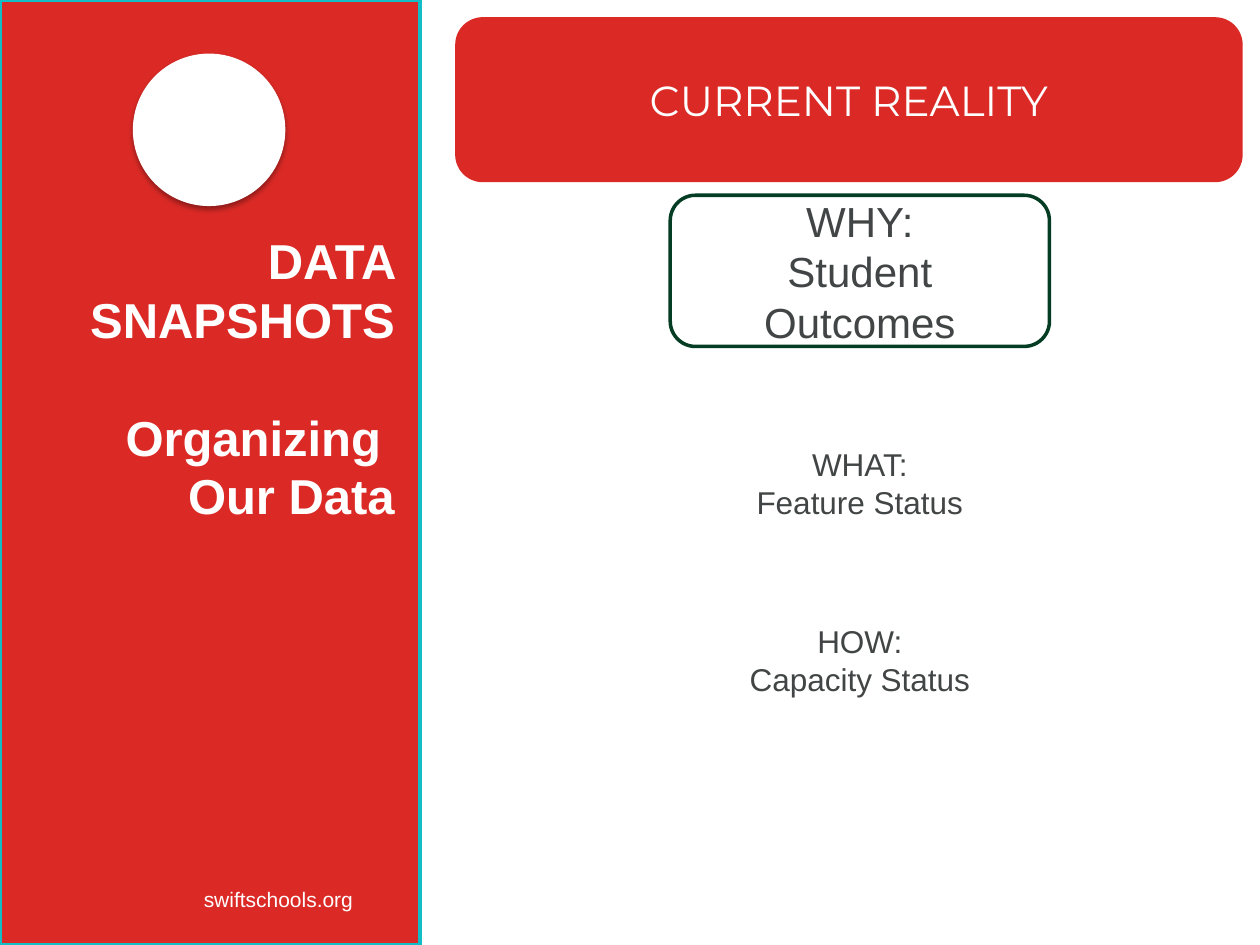
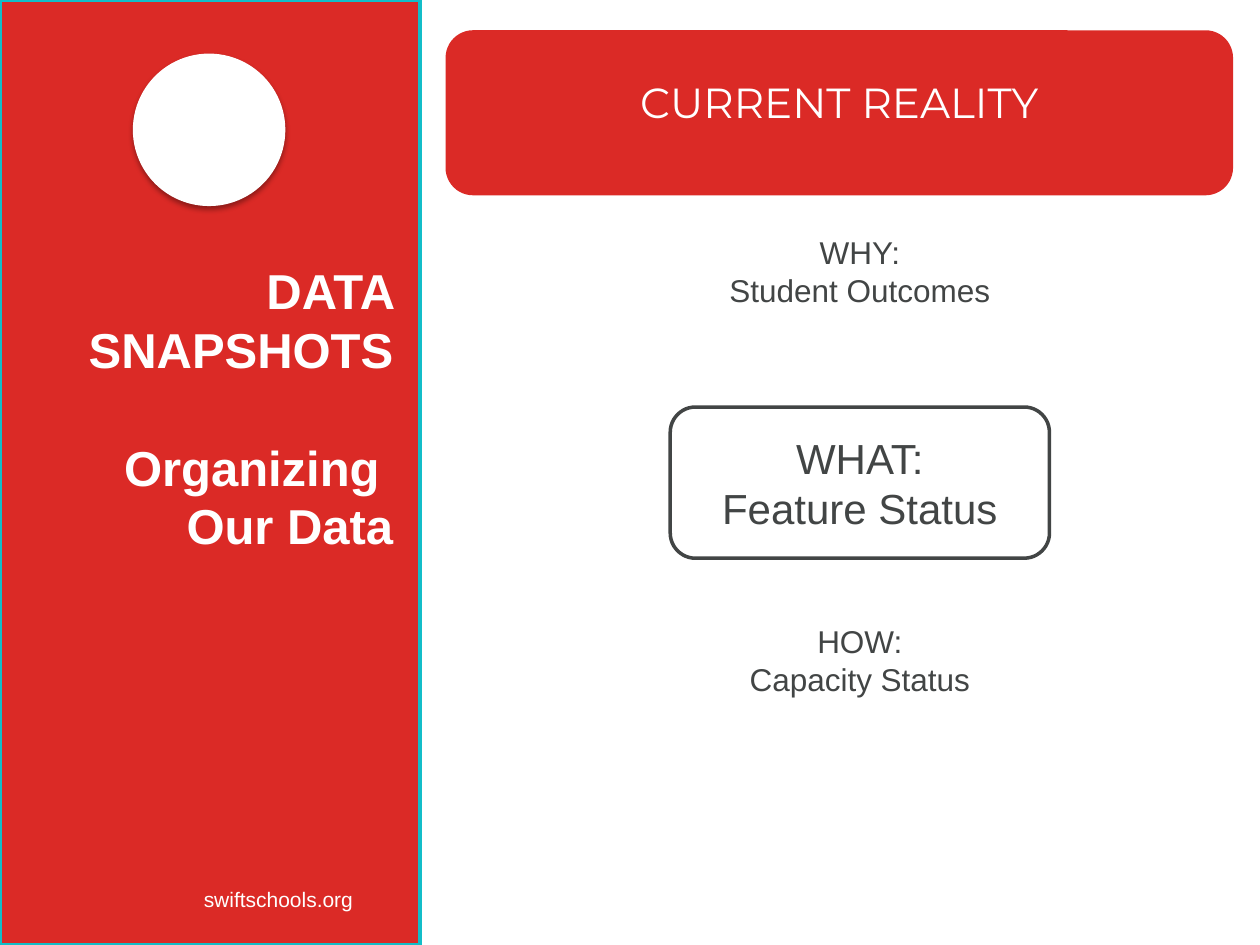
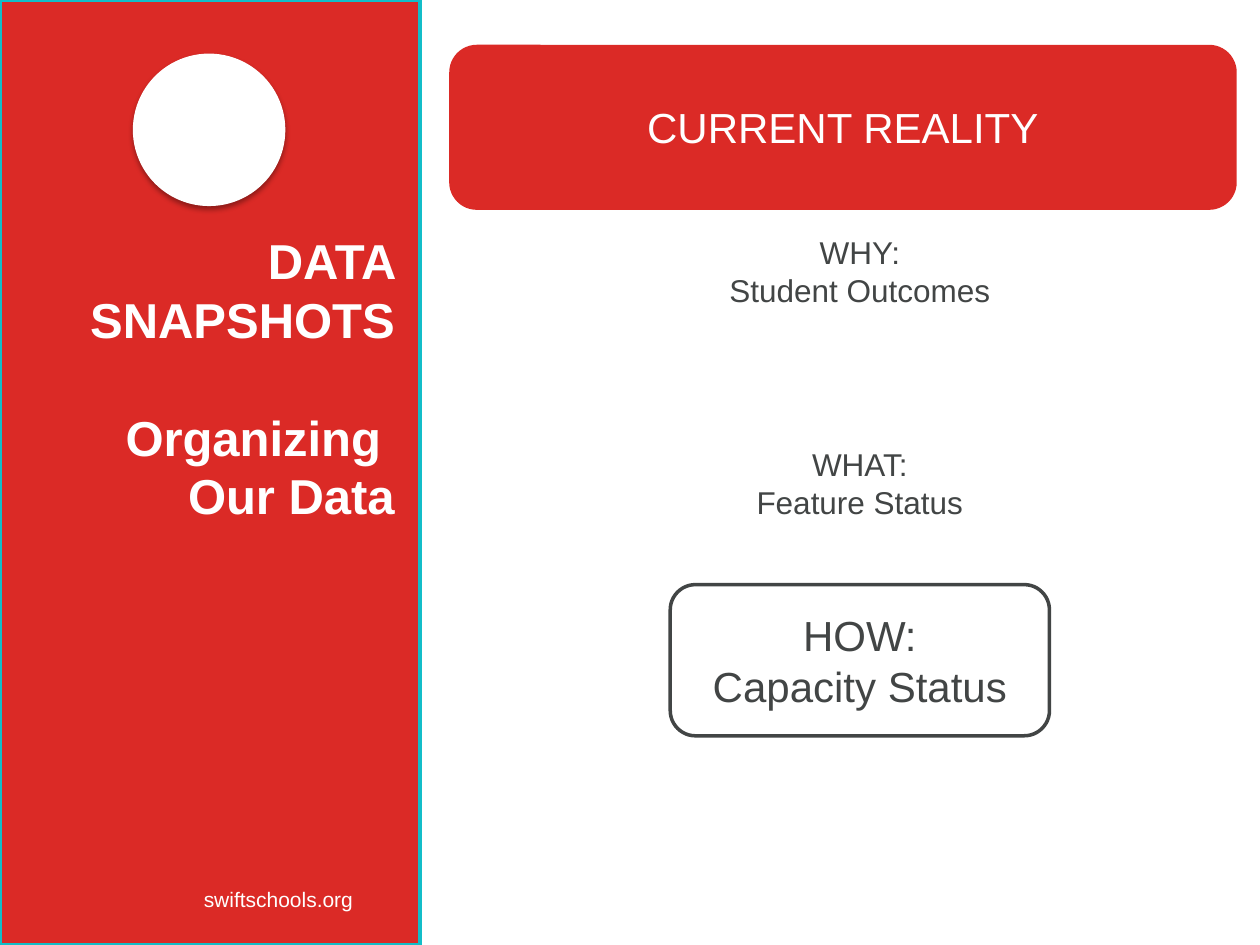
import pptx
import pptx.dml.color
import pptx.enum.shapes
import pptx.enum.text
import pptx.oxml
import pptx.oxml.ns
import pptx.util

Pt = pptx.util.Pt
RGBColor = pptx.dml.color.RGBColor
SHAPE = pptx.enum.shapes.MSO_SHAPE
ALIGN = pptx.enum.text.PP_ALIGN
ANCHOR = pptx.enum.text.MSO_ANCHOR

RED = RGBColor(0xDB, 0x2A, 0x26)
TEAL = RGBColor(0x13, 0xBD, 0xC8)
GREEN = RGBColor(0x04, 0x3D, 0x24)
GRAY = RGBColor(0x42, 0x45, 0x45)
WHITE = RGBColor(0xFF, 0xFF, 0xFF)

FOOTER = {"name": "Arial", "size": Pt(12)}
SIDE_TITLE = {"name": "Arial", "size": Pt(28), "bold": True}
HEADING = {"name": "Arial", "size": Pt(24)}
BODY = {"name": "Arial", "size": Pt(18)}

SHADOW = (
    '<a:effectLst %s><a:outerShdw blurRad="%d" dist="%d" dir="5400000" rotWithShape="0">'
    '<a:srgbClr val="000000"><a:alpha val="35000"/></a:srgbClr></a:outerShdw></a:effectLst>'
    % (pptx.oxml.ns.nsdecls("a"), Pt(3.1), Pt(1.8))
)

# Top and lines of each question box
QUESTIONS = [
    (111.6, ["WHY:", "Student Outcomes"]),
    (232.6, ["WHAT:", "Feature Status"]),
    (334.1, ["HOW:", "Capacity Status"]),
]

# Banner left and top, heading top and font, side title left and top,
# highlighted question and its outline colour
SLIDES = [
    (260.1, 9.8, 38.9, "Montserrat", 16.6, 128.2, 0, GREEN),
    (254.6, 17.3, 40.3, "Montserrat", 15.8, 145.4, 1, GRAY),
    (256.7, 25.6, 54.7, "Arial", 16.6, 128.2, 2, GRAY),
]


class Deck:
    def __init__(self):
        self.prs = pptx.Presentation()
        self.prs.slide_width, self.prs.slide_height = Pt(720), Pt(540)
        self.s = None

    def new_slide(self):
        self.s = self.prs.slides.add_slide(self.prs.slide_layouts[6])

    def shape(self, kind, x, y, w, h, fill=None, line=None, width=2):
        sp = self.s.shapes.add_shape(kind, Pt(x), Pt(y), Pt(w), Pt(h))
        sp.shadow.inherit = False
        if fill is None:
            sp.fill.background()
        else:
            sp.fill.solid()
            sp.fill.fore_color.rgb = fill
        if line is None:
            sp.line.fill.background()
        else:
            sp.line.color.rgb = line
            sp.line.width = Pt(width)
        return sp

    def set_text(self, sp, lines, fmt, color, align, anchor=ANCHOR.TOP):
        tf = sp.text_frame
        tf.word_wrap = True
        tf.vertical_anchor = anchor
        for i, text in enumerate(lines):
            p = tf.add_paragraph() if i else tf.paragraphs[0]
            p.alignment = align
            r = p.add_run()
            r.text = text
            for key, value in fmt.items():
                setattr(r.font, key, value)
            r.font.color.rgb = color
        return tf

    def text(self, x, y, w, h, lines, fmt, align=ALIGN.LEFT):
        sp = self.s.shapes.add_textbox(Pt(x), Pt(y), Pt(w), Pt(h))
        return self.set_text(sp, lines, fmt, WHITE, align)

    def side_band(self):
        self.shape(SHAPE.RECTANGLE, 0, 0, 240, 540, RED, TEAL)
        self.text(109.4, 503.3, 125.3, 21.6, ["swiftschools.org"], FOOTER)
        sp = self.shape(SHAPE.OVAL, 76.3, 31, 86.4, 86.4, WHITE, WHITE, 0.75)
        pr = sp._element.spPr
        pr.remove(pr.find(pptx.oxml.ns.qn("a:effectLst")))
        pr.append(pptx.oxml.parse_xml(SHADOW))

    def side_title(self, x, y):
        lines = ["DATA SNAPSHOTS", "Organizing ", "Our Data"]
        tf = self.text(x, y, 216, 200.9, lines, SIDE_TITLE, ALIGN.RIGHT)
        tf.paragraphs[1].space_before = Pt(33.6)

    def banner(self, x, y, heading_y, font):
        self.shape(SHAPE.ROUNDED_RECTANGLE, x, y, 450, 94.3, RED)
        self.text(x + 80.5, heading_y, 288.7, 36, ["CURRENT REALITY"],
                  {**HEADING, "name": font}, ALIGN.CENTER)

    def question(self, y, lines, outline=None):
        sp = self.shape(SHAPE.ROUNDED_RECTANGLE, 383, y, 216.7, 86.4, line=outline)
        self.set_text(sp, lines, HEADING if outline else BODY, GRAY,
                      ALIGN.CENTER, ANCHOR.MIDDLE)


def main():
    deck = Deck()
    for x, y, heading_y, font, title_x, title_y, current, outline in SLIDES:
        deck.new_slide()
        deck.side_band()
        deck.banner(x, y, heading_y, font)
        deck.side_title(title_x, title_y)
        for i, (top, lines) in enumerate(QUESTIONS):
            deck.question(top, lines, outline if i == current else None)
    deck.prs.save("out.pptx")


if __name__ == "__main__":
    main()
